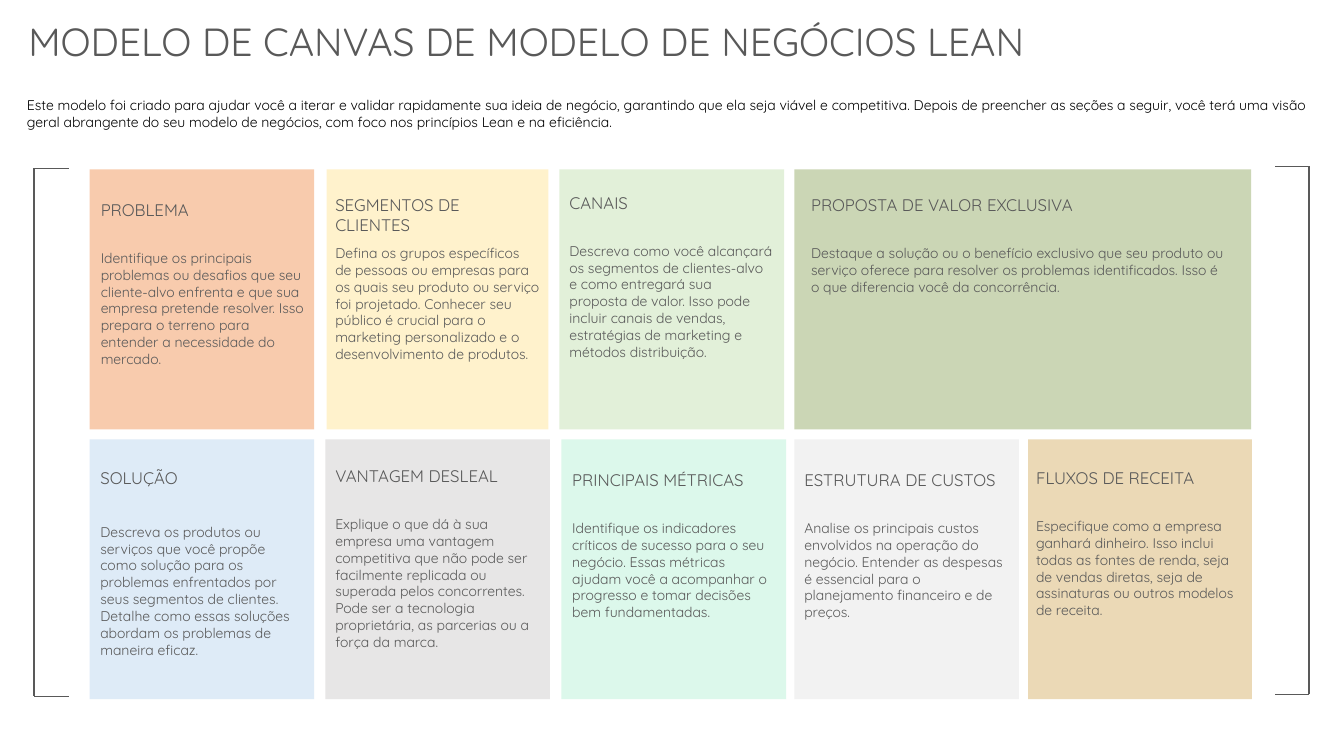
from dataclasses import dataclass

from lxml.etree import SubElement
from pptx import Presentation
from pptx.dml.color import RGBColor
from pptx.enum.shapes import MSO_CONNECTOR as Connector
from pptx.enum.shapes import MSO_SHAPE as Shape
from pptx.enum.text import MSO_ANCHOR as Anchor
from pptx.enum.text import MSO_AUTO_SIZE as AutoSize
from pptx.enum.text import PP_ALIGN as Align
from pptx.oxml.ns import qn
from pptx.util import Cm, Pt


@dataclass(frozen=True)
class Theme:
    font: str = "Quicksand"
    grey: str = "595959"
    black: str = "000000"
    background: str = "FFFFFF"
    title_size: int = 28
    heading_size: int = 12
    body_size: int = 10
    line_width: int = 1


@dataclass(frozen=True)
class Section:
    """One canvas block; lengths in centimetres."""
    heading: str
    body: str
    color: str
    left: float
    width: float
    text_left: float
    text_top: float
    text_width: float = 5.64
    body_offset: float = 1.26


ROW_HEIGHT = 6.55
ROWS = {
    4.27: [
        Section("PROBLEMA",
                "Identifique os principais problemas ou desafios que seu cliente-alvo enfrenta "
                "e que sua empresa pretende resolver. Isso prepara o terreno para entender a "
                "necessidade do mercado.",
                "F8CBAD", 2.26, 5.66, 2.29, 4.9),
        Section("SEGMENTOS DE CLIENTES",
                "Defina os grupos específicos de pessoas ou empresas para os quais seu produto "
                "ou serviço foi projetado. Conhecer seu público é crucial para o marketing "
                "personalizado e o desenvolvimento de produtos.",
                "FFF2CC", 8.23, 5.59, 8.2, 4.78),
        Section("CANAIS",
                "Descreva como você alcançará os segmentos de clientes-alvo e como entregará sua "
                "proposta de valor. Isso pode incluir canais de vendas, estratégias de marketing "
                "e métodos distribuição.",
                "E2F0D9", 14.1, 5.66, 14.1, 4.72),
        Section("PROPOSTA DE VALOR EXCLUSIVA",
                "Destaque a solução ou o benefício exclusivo que seu produto ou serviço oferece "
                "para resolver os problemas identificados. Isso é o que diferencia você da "
                "concorrência.",
                "CBD6B5", 20.02, 11.51, 20.19, 4.78, text_width=10.92),
    ],
    11.07: [
        Section("SOLUÇÃO",
                "Descreva os produtos ou serviços que você propõe como solução para os problemas "
                "enfrentados por seus segmentos de clientes. Detalhe como essas soluções abordam "
                "os problemas de maneira eficaz.",
                "DEEBF7", 2.26, 5.66, 2.28, 11.66, body_offset=1.4),
        Section("VANTAGEM DESLEAL",
                "Explique o que dá à sua empresa uma vantagem competitiva que não pode ser "
                "facilmente replicada ou superada pelos concorrentes. Pode ser a tecnologia "
                "proprietária, as parcerias ou a força da marca.",
                "E7E6E6", 8.2, 5.66, 8.2, 11.61, text_width=5.59),
        Section("PRINCIPAIS MÉTRICAS",
                "Identifique os indicadores críticos de sucesso para o seu negócio. Essas "
                "métricas ajudam você a acompanhar o progresso e tomar decisões bem "
                "fundamentadas.",
                "DCF8EB", 14.15, 5.66, 14.17, 11.71),
        Section("ESTRUTURA DE CUSTOS",
                "Analise os principais custos envolvidos na operação do negócio. Entender as "
                "despesas é essencial para o planejamento financeiro e de preços.",
                "F2F2F2", 20.02, 5.66, 20.02, 11.71),
        Section("FLUXOS DE RECEITA",
                "Especifique como a empresa ganhará dinheiro. Isso inclui todas as fontes de "
                "renda, seja de vendas diretas, seja de assinaturas ou outros modelos de receita.",
                "EBD9B6", 25.91, 5.64, 25.86, 11.66),
    ],
}
INTRODUCTION = (
    "Este modelo foi criado para ajudar você a iterar e validar rapidamente sua ideia de negócio, "
    "garantindo que ela seja viável e competitiva. Depois de preencher as seções a seguir, você "
    "terá uma visão geral abrangente do seu modelo de negócios, com foco nos princípios Lean e na "
    "eficiência."
)


class CanvasSlide:
    def __init__(self, presentation, theme):
        self.theme = theme
        self.slide = presentation.slides.add_slide(presentation.slide_layouts[5])
        fill = self.slide.background.fill
        fill.solid()
        fill.fore_color.rgb = RGBColor.from_string(theme.background)

    def set_text(self, shape, text, size, color):
        frame = shape.text_frame
        frame.word_wrap = True
        frame.auto_size = AutoSize.NONE
        frame.vertical_anchor = Anchor.TOP
        frame.text = text
        paragraph = frame.paragraphs[0]
        paragraph.alignment = Align.LEFT
        paragraph.font.name = self.theme.font
        paragraph.font.size = Pt(size)
        paragraph.font.color.rgb = RGBColor.from_string(color)

    def title(self, text, left, top, width, height):
        shape = self.slide.shapes.title
        shape.left, shape.top = Cm(left), Cm(top)
        shape.width, shape.height = Cm(width), Cm(height)
        self.set_text(shape, text, self.theme.title_size, self.theme.grey)

    def text(self, text, left, top, width, height, size, color):
        box = self.slide.shapes.add_textbox(Cm(left), Cm(top), Cm(width), Cm(height))
        self.set_text(box, text, size, color)

    def panel(self, left, top, width, height, color):
        shape = self.slide.shapes.add_shape(
            Shape.RECTANGLE, Cm(left), Cm(top), Cm(width), Cm(height))
        shape.shadow.inherit = False
        shape.fill.solid()
        shape.fill.fore_color.rgb = RGBColor.from_string(color)
        shape.line.fill.background()

    def section(self, section, top):
        theme = self.theme
        self.panel(section.left, top, section.width, ROW_HEIGHT, section.color)
        self.text(section.heading, section.text_left, section.text_top,
                  section.text_width, 0.77, theme.heading_size, theme.grey)
        body_top = section.text_top + section.body_offset
        self.text(section.body, section.text_left, body_top,
                  section.text_width, 3.68, theme.body_size, theme.grey)

    def bracket(self, spine, arm_end, top, bottom):
        """Group a vertical spine with arms that reach to arm_end."""
        group = self.slide.shapes.add_group_shape()
        for start, end in (
            ((spine, top), (arm_end, top)),
            ((spine, bottom), (arm_end, bottom)),
            ((spine, top), (spine, bottom)),
        ):
            line = group.shapes.add_connector(
                Connector.STRAIGHT, *map(Cm, start), *map(Cm, end))
            line.line.color.rgb = RGBColor.from_string(self.theme.grey)
            line.line.width = Pt(self.theme.line_width)
            SubElement(line._element.spPr, qn("a:effectLst"))


def main():
    presentation = Presentation()
    presentation.slide_width, presentation.slide_height = Cm(33.87), Cm(19.05)
    theme = Theme()
    canvas = CanvasSlide(presentation, theme)
    canvas.title("MODELO DE CANVAS DE MODELO DE NEGÓCIOS LEAN", 0.46, 0.3, 32.89, 1.45)
    canvas.text(INTRODUCTION, 0.43, 2.31, 32.77, 1.12, theme.body_size, theme.black)
    for top, sections in ROWS.items():
        for section in sections:
            canvas.section(section, top)
    canvas.bracket(0.86, 1.75, 4.24, 17.55)
    canvas.bracket(32.99, 32.13, 4.19, 17.5)
    presentation.save("out.pptx")


if __name__ == "__main__":
    main()
